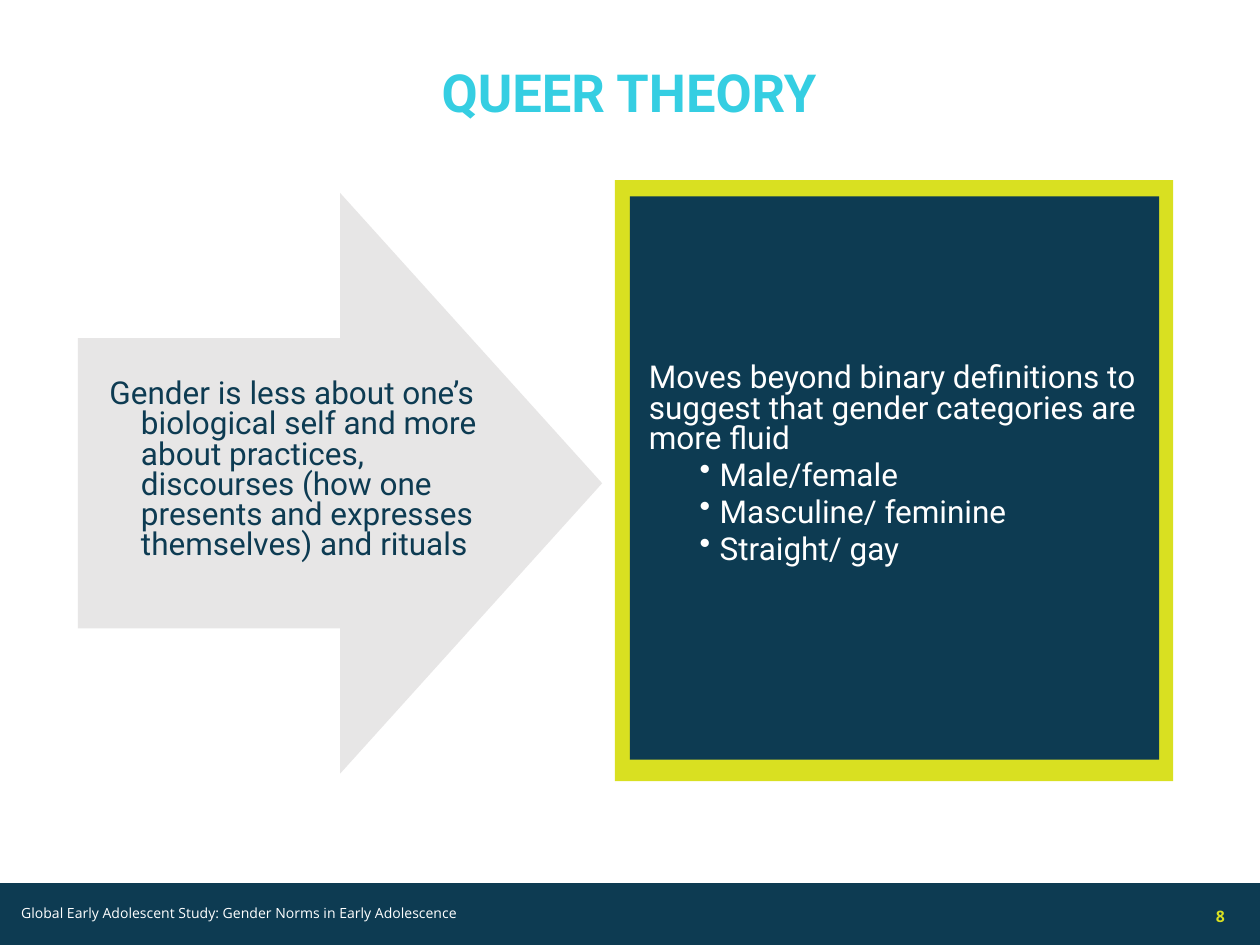
from dataclasses import dataclass

import pptx
import pptx.dml.color
import pptx.enum.shapes
import pptx.enum.text
import pptx.oxml
import pptx.oxml.ns
import pptx.util

Pt = pptx.util.Pt
Shape = pptx.enum.shapes.MSO_SHAPE
Align = pptx.enum.text.PP_ALIGN
Anchor = pptx.enum.text.MSO_ANCHOR


@dataclass(frozen=True)
class Theme:
    navy: str = "0D3B52"
    lime: str = "D9E021"
    cyan: str = "35CEE2"
    grey: str = "E7E6E6"
    white: str = "FFFFFF"
    heading_font: str = "Roboto"
    footer_font: str = "Open Sans"
    title_size: float = 30
    body_size: float = 18
    number_size: float = 9
    footer_size: float = 8


def rgb(value):
    return pptx.dml.color.RGBColor.from_string(value)


class Painter:
    def __init__(self, page, theme):
        self.page = page
        self.theme = theme

    def shape(self, kind, place, fill):
        shape = self.page.shapes.add_shape(kind, *map(Pt, place))
        shape.shadow.inherit = False
        shape.fill.solid()
        shape.fill.fore_color.rgb = rgb(fill)
        shape.line.fill.background()
        return shape

    def text_box(self, place, insets=(0, 0, 0, 0), anchor=Anchor.MIDDLE):
        box = self.page.shapes.add_textbox(*map(Pt, place))
        self.frame(box, insets, anchor)
        return box

    def frame(self, box, insets, anchor=Anchor.MIDDLE):
        """Set wrapping, anchor and insets (left, top, right, bottom)."""
        frame = box.text_frame
        frame.word_wrap = True
        frame.vertical_anchor = anchor
        frame.margin_left, frame.margin_top, frame.margin_right, frame.margin_bottom = map(Pt, insets)

    def para(self, box, text, size, color, font=None, bold=False, align=Align.LEFT,
             spacing=1.0, before=0, indent=(0, 0), bullet=None):
        """Add a paragraph; indent is (left margin, first line)."""
        frame = box.text_frame
        para = frame.paragraphs[0]
        if para.runs:
            para = frame.add_paragraph()
        para.alignment = align
        para.line_spacing = spacing
        para.space_before = Pt(before)
        properties = para._p.get_or_add_pPr()
        properties.set("marL", str(Pt(indent[0])))
        properties.set("indent", str(Pt(indent[1])))
        if bullet:
            para.level = 1
            namespace = pptx.oxml.ns.nsdecls("a")
            properties.append(pptx.oxml.parse_xml(
                f'<a:buClr {namespace}><a:srgbClr val="{color}"/></a:buClr>'))
            properties.append(pptx.oxml.parse_xml(f'<a:buChar {namespace} char="{bullet}"/>'))
        span = para.add_run()
        span.text = text
        span.font.name = font or self.theme.heading_font
        span.font.size = Pt(size)
        span.font.bold = bold
        span.font.color.rgb = rgb(color)


def main():
    deck = pptx.Presentation()
    deck.slide_width, deck.slide_height = Pt(720), Pt(540)
    theme = Theme()
    painter = Painter(deck.slides.add_slide(deck.slide_layouts[6]), theme)

    painter.shape(Shape.RECTANGLE, (0, 504.7, 720, 35.3), theme.navy)
    painter.shape(Shape.RIGHT_ARROW, (44.6, 110.2, 299.5, 331.9), theme.grey)

    number = painter.text_box((659.5, 509, 47.5, 28.8), (7.2, 3.6, 7.2, 3.6))
    painter.para(number, "8", theme.number_size, theme.lime, theme.footer_font,
                 bold=True, align=Align.RIGHT)

    title = painter.text_box((15.1, 27.4, 689, 54.7))
    painter.para(title, "QUEER THEORY", theme.title_size, theme.cyan,
                 bold=True, align=Align.CENTER, spacing=0.9)

    premise = painter.text_box((44.6, 217.4, 254.2, 117.4), anchor=Anchor.TOP)
    painter.para(premise, "Gender is less about one’s biological self and more about practices, "
                 "discourses (how one presents and expresses themselves) and rituals",
                 theme.body_size, theme.navy, spacing=0.8, indent=(36, -18))

    painter.shape(Shape.RECTANGLE, (351.4, 103, 319, 343.4), theme.lime)
    panel = painter.shape(Shape.RECTANGLE, (360, 112.3, 302.4, 321.8), theme.navy)
    painter.frame(panel, (10.8, 10.8, 10.8, 25.2))
    painter.para(panel, "Moves beyond binary definitions to suggest that gender categories are more fluid",
                 theme.body_size, theme.white, spacing=0.8, before=7.5)
    for pair in ("Male/female", "Masculine/ feminine", "Straight/ gay"):
        painter.para(panel, pair, theme.body_size, theme.white, spacing=0.8,
                     before=3.8, indent=(40.5, -11.5), bullet="•")

    footer = painter.text_box((5, 509, 277.2, 25.2), (7.2, 7.2, 7.2, 7.2))
    painter.para(footer, "Global Early Adolescent Study: Gender Norms in Early Adolescence",
                 theme.footer_size, theme.white, theme.footer_font)

    deck.save("out.pptx")


if __name__ == "__main__":
    main()
